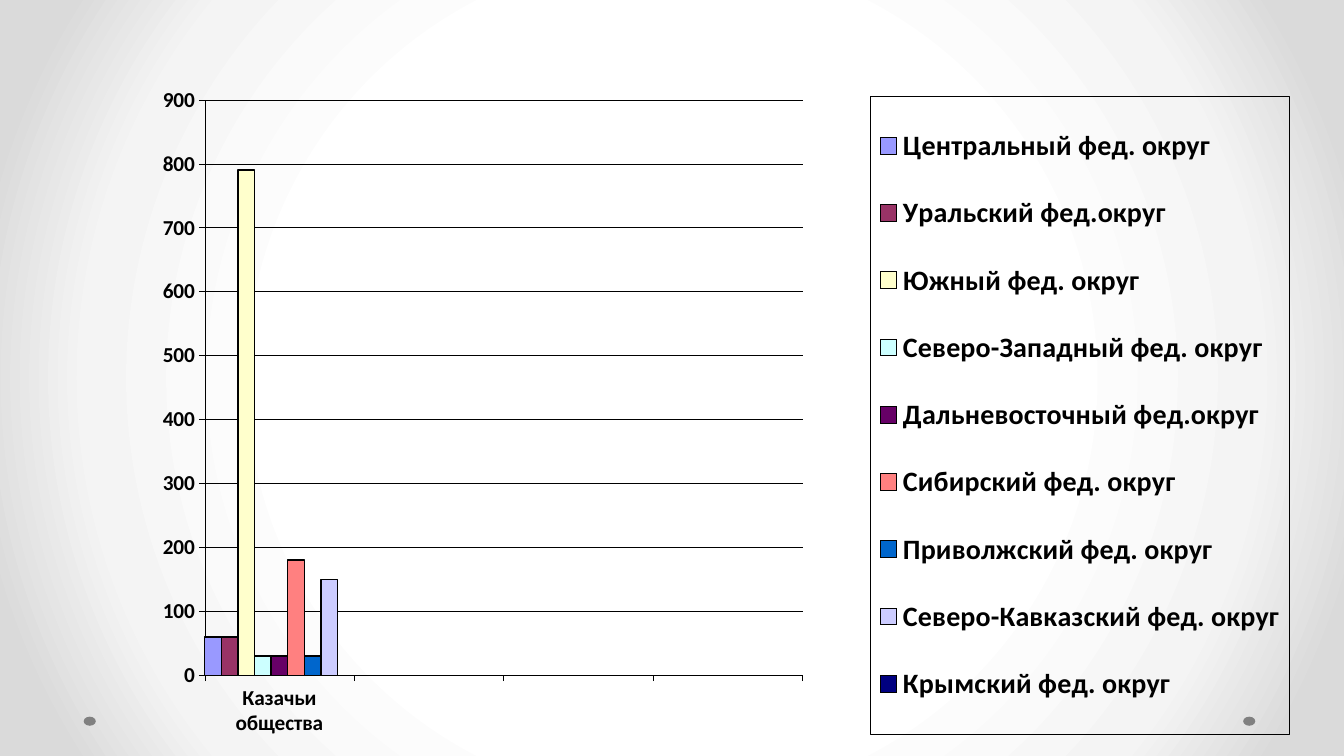
from pptx import Presentation
from pptx.chart.data import CategoryChartData
from pptx.dml.color import RGBColor
from pptx.enum.chart import XL_CHART_TYPE, XL_LEGEND_POSITION, XL_TICK_LABEL_POSITION, XL_TICK_MARK
from pptx.enum.shapes import MSO_SHAPE
from pptx.oxml import parse_xml
from pptx.oxml.ns import qn
from pptx.util import Inches, Pt

WIDE, HIGH = Inches(13.33), Inches(7.5)
FRAME = (0.9, 0.75, 12, 7.63)
PLOT = (2.03, 0.99, 5.93, 5.71)
LEGEND = (8.63, 0.95, 4.16, 6.33)
DRAW = 'xmlns:a="http://schemas.openxmlformats.org/drawingml/2006/main"'
CHART = 'xmlns:c="http://schemas.openxmlformats.org/drawingml/2006/chart"'
PRES = 'xmlns:p="http://schemas.openxmlformats.org/presentationml/2006/main"'
STOPS = [(50, "FFFFFF"), (76, "F4F4F4"), (92, "DADADA")]
CATS = ["Казачьи общества", "", "", ""]
ROWS = [
    ("Центральный фед. округ", 60, "9999FF"),
    ("Уральский фед.округ", 60, "993366"),
    ("Южный фед. округ", 790, "FFFFCC"),
    ("Северо-Западный фед. округ", 30, "CCFFFF"),
    ("Дальневосточный фед.округ", 30, "660066"),
    ("Сибирский фед. округ", 180, "FF8080"),
    ("Приволжский фед. округ", 30, "0066CC"),
    ("Северо-Кавказский фед. округ", 150, "CCCCFF"),
    ("Крымский фед. округ", 0, "000080"),
]


def color(code):
    return RGBColor.from_string(code)


def style(font, size, code="000000", bold=True):
    font.name = "Calibri"
    font.size = Pt(size)
    font.bold = bold
    font.color.rgb = color(code)


def stroke(line, width, code="000000"):
    line.color.rgb = color(code)
    line.width = Pt(width)


def backdrop(slide):
    stops = "".join(
        f'<a:gs pos="{pos * 1000}"><a:srgbClr val="{code}"/></a:gs>' for pos, code in STOPS
    )
    slide.element.cSld.insert(0, parse_xml(
        f'<p:bg {PRES} {DRAW}><p:bgPr><a:gradFill rotWithShape="1"><a:gsLst>{stops}</a:gsLst>'
        '<a:path path="circle"><a:fillToRect l="50000" t="50000" r="50000" b="50000"/></a:path>'
        '</a:gradFill><a:effectLst/></p:bgPr></p:bg>'
    ))


def dot(slide, left):
    shape = slide.shapes.add_shape(
        MSO_SHAPE.OVAL, Inches(left), Inches(7.11), Inches(0.12), Inches(0.09)
    )
    shape.shadow.inherit = False
    shape.fill.solid()
    shape.fill.fore_color.rgb = color("808080")
    shape.line.fill.background()


def layout(box, inner=False):
    left, top, wide, high = FRAME
    shares = (
        (box[0] - left) / wide, (box[1] - top) / high, box[2] / wide, box[3] / high
    )
    target = '<c:layoutTarget val="inner"/>' if inner else ""
    modes = '<c:xMode val="edge"/><c:yMode val="edge"/>'
    sizes = "".join(f'<c:{tag} val="{val:.4f}"/>' for tag, val in zip("xywh", shares))
    return parse_xml(
        f'<c:layout {CHART}><c:manualLayout>{target}{modes}{sizes}</c:manualLayout></c:layout>'
    )


def clear(node):
    for old in node.findall(qn("c:layout")):
        node.remove(old)


def set_axis(axis):
    axis.major_tick_mark = XL_TICK_MARK.OUTSIDE
    axis.minor_tick_mark = XL_TICK_MARK.NONE
    style(axis.tick_labels.font, 15.2)
    stroke(axis.format.line, 0.25)


def set_legend(chart):
    chart.has_legend = True
    legend = chart.legend
    legend.position = XL_LEGEND_POSITION.RIGHT
    legend.include_in_layout = False
    style(legend.font, 20)
    node = legend._element
    clear(node)
    over = node.find(qn("c:overlay"))
    over.addprevious(layout(LEGEND))
    over.addnext(parse_xml(
        f'<c:spPr {CHART} {DRAW}><a:noFill/><a:ln w="3175"><a:solidFill>'
        '<a:srgbClr val="000000"/></a:solidFill></a:ln></c:spPr>'
    ))


def columns(slide):
    data = CategoryChartData()
    data.categories = CATS
    for name, value, code in ROWS:
        data.add_series(name, [value, None, None, None])
    box = [Inches(size) for size in FRAME]
    chart = slide.shapes.add_chart(XL_CHART_TYPE.COLUMN_CLUSTERED, *box, data).chart
    chart.has_title = False
    style(chart.font, 16.7)
    plot = chart.plots[0]
    plot.vary_by_categories = False
    plot.gap_width = 0
    plot.overlap = 0
    for series, (name, value, code) in zip(plot.series, ROWS):
        series.invert_if_negative = False
        series.format.fill.solid()
        series.format.fill.fore_color.rgb = color(code)
        stroke(series.format.line, 1)
    set_axis(chart.category_axis)
    chart.category_axis.tick_label_position = XL_TICK_LABEL_POSITION.LOW
    axis = chart.value_axis
    set_axis(axis)
    axis.minimum_scale, axis.maximum_scale, axis.major_unit = 0, 900, 100
    axis.has_major_gridlines = True
    stroke(axis.major_gridlines.format.line, 0.25)
    set_legend(chart)
    area = chart._chartSpace.chart.plotArea
    clear(area)
    area.insert(0, layout(PLOT, inner=True))


def main():
    deck = Presentation()
    deck.slide_width, deck.slide_height = WIDE, HIGH
    slide = deck.slides.add_slide(deck.slide_layouts[6])
    backdrop(slide)
    for left in (12.33, 0.83):
        dot(slide, left)
    columns(slide)
    deck.save("out.pptx")


if __name__ == "__main__":
    main()
